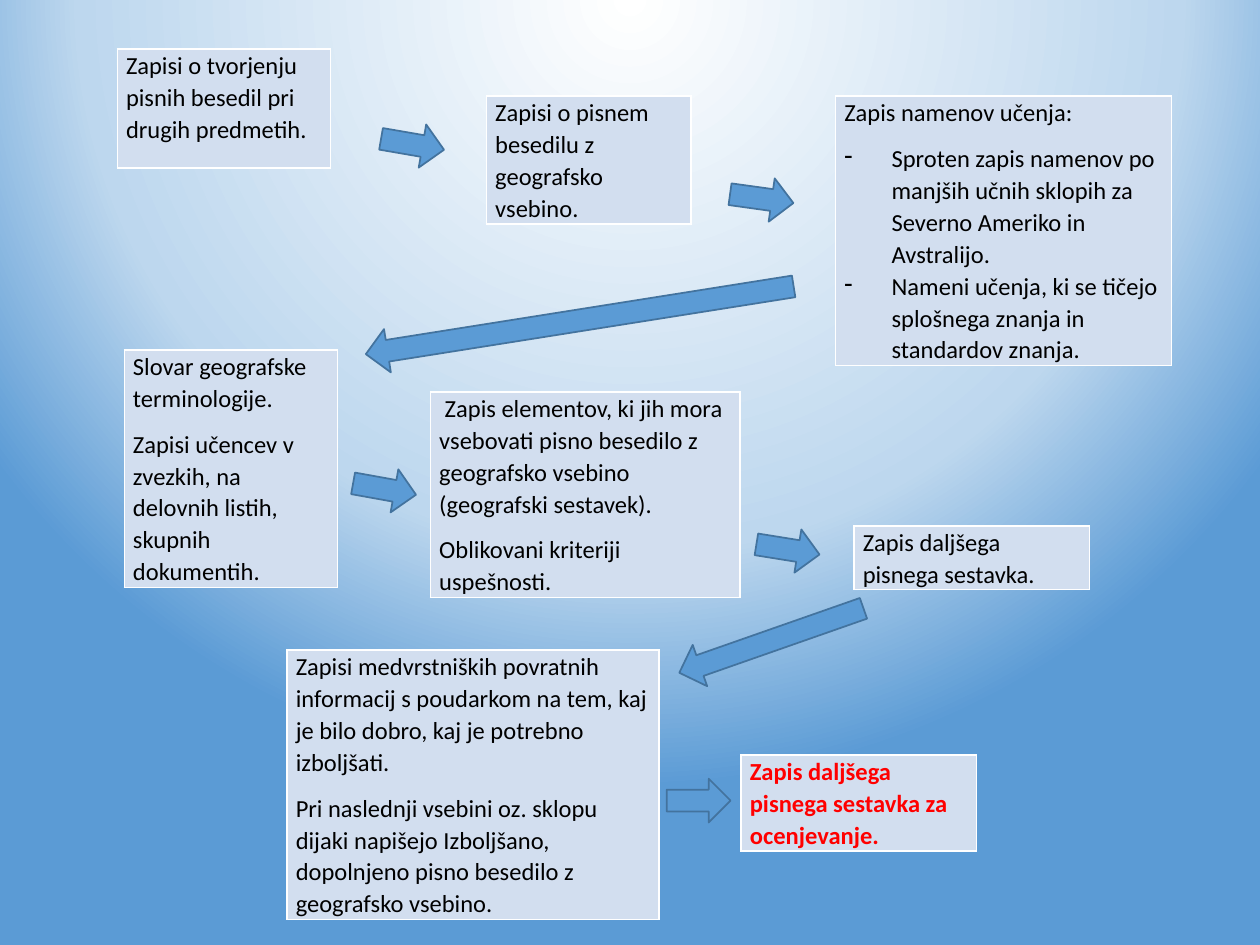
import pptx
import pptx.dml.color
import pptx.enum.shapes
import pptx.oxml
import pptx.oxml.ns
import pptx.util
from lxml import etree

Pt = pptx.util.Pt
RGBColor = pptx.dml.color.RGBColor
qn = pptx.oxml.ns.qn

WHITE = RGBColor(0xFF, 0xFF, 0xFF)
BLACK = RGBColor(0x00, 0x00, 0x00)
RED = RGBColor(0xFF, 0x00, 0x00)
PALE_BLUE = RGBColor(0xD2, 0xDE, 0xEF)
SKY_BLUE = RGBColor(0xBD, 0xD7, 0xEE)
BLUE = RGBColor(0x5B, 0x9B, 0xD5)
DARK_BLUE = RGBColor(0x43, 0x73, 0x9E)

BULLET = "- "
BULLET_INDENT = Pt(27)
ARROW_WIDTH, ARROW_HEIGHT = 36.5, 25

NOTES = [
    ((67, 28, 122, 68), ["Zapisi o tvorjenju pisnih besedil pri drugih predmetih."]),
    ((278, 55, 117, 72), ["Zapisi o pisnem besedilu z geografsko vsebino."]),
    ((477.5, 55, 192, 152), [
        "Zapis namenov učenja:",
        BULLET + "Sproten zapis namenov po manjših učnih sklopih za Severno Ameriko in Avstralijo.",
        BULLET + "Nameni učenja, ki se tičejo splošnega znanja in standardov znanja.",
    ]),
    ((71, 200, 122, 134), [
        "Slovar geografske terminologije.",
        "Zapisi učencev v zvezkih, na delovnih listih, skupnih dokumentih.",
    ]),
    ((246, 224, 177, 116), [
        " Zapis elementov, ki jih mora vsebovati pisno besedilo z geografsko vsebino (geografski sestavek).",
        "Oblikovani kriteriji uspešnosti.",
    ]),
    ((488, 300.5, 134.5, 36), ["Zapis daljšega pisnega sestavka."]),
    ((164, 371.5, 212.5, 152), [
        "Zapisi medvrstniških povratnih informacij s poudarkom na tem, kaj je bilo dobro, kaj je potrebno izboljšati.",
        "Pri naslednji vsebini oz. sklopu dijaki napišejo Izboljšano, dopolnjeno pisno besedilo z geografsko vsebino.",
    ]),
]
FINAL_NOTE = ((423.5, 431.5, 134.5, 54), ["Zapis daljšega pisnega sestavka za ocenjevanje."])

ARROWS = [
    (217.5, 70, ARROW_WIDTH, 9.8),
    (417, 101, ARROW_WIDTH, 7.9),
    (201.5, 267, ARROW_WIDTH, 10.2),
    (432, 301.5, ARROW_WIDTH, 9.1),
    (381, 445, ARROW_WIDTH, 0),
    (207.5, 170.5, 247.5, 171),
    (385, 353.5, 111.5, 160.7),
]


def paint_background(slide):
    slide.background.fill.gradient()
    gradient = next(slide.element.iter(qn("a:gradFill")))
    for child in list(gradient):
        gradient.remove(child)
    stops = etree.SubElement(gradient, qn("a:gsLst"))
    for position, color in ((0, WHITE), (70, SKY_BLUE), (100, BLUE)):
        stop = etree.SubElement(stops, qn("a:gs"), pos=str(position * 1000))
        etree.SubElement(stop, qn("a:srgbClr"), val=str(color))
    circle = etree.SubElement(gradient, qn("a:path"), {"path": "circle"})
    etree.SubElement(circle, qn("a:fillToRect"), l="50000", t="-80000", r="50000", b="180000")


def outline_cell(cell_properties):
    for index, side in enumerate(("lnL", "lnR", "lnT", "lnB")):
        border = etree.Element(qn(f"a:{side}"), w=str(Pt(1)))
        border_fill = etree.SubElement(border, qn("a:solidFill"))
        etree.SubElement(border_fill, qn("a:srgbClr"), val=str(WHITE))
        cell_properties.insert(index, border)


def write_paragraph(paragraph, element, text, color, bold):
    bulleted = text.startswith(BULLET)
    paragraph.text = text.removeprefix(BULLET)
    paragraph.line_spacing = 1.07
    paragraph.space_after = Pt(0 if bulleted else 8)
    font = paragraph.runs[0].font
    font.name, font.size, font.bold = "Calibri", Pt(14), bold
    font.color.rgb = color
    if bulleted:
        properties = element.find(qn("a:pPr"))
        properties.set("marL", str(BULLET_INDENT))
        properties.set("indent", str(-BULLET_INDENT))
        etree.SubElement(properties, qn("a:buChar"), char=BULLET.strip())


def add_note(slide, box, texts, color=BLACK, bold=False):
    frame = slide.shapes.add_table(1, 1, *map(Pt, box))
    table = frame.table
    table.first_row = table.horz_banding = False
    cell = table.cell(0, 0)
    cell.margin_left = cell.margin_right = Pt(5)
    cell.margin_top = cell.margin_bottom = 0
    cell.fill.solid()
    cell.fill.fore_color.rgb = PALE_BLUE
    outline_cell(next(frame.element.iter(qn("a:tcPr"))))
    cell.text_frame.text = "\n".join(texts)
    elements = frame.element.iter(qn("a:p"))
    for paragraph, element, text in zip(cell.text_frame.paragraphs, elements, texts):
        write_paragraph(paragraph, element, text, color, bold)


def add_arrow(slide, left, top, width, rotation):
    arrow = slide.shapes.add_shape(
        pptx.enum.shapes.MSO_SHAPE.RIGHT_ARROW, Pt(left), Pt(top), Pt(width), Pt(ARROW_HEIGHT)
    )
    arrow.rotation = rotation
    arrow.shadow.inherit = False
    arrow.fill.solid()
    arrow.fill.fore_color.rgb = BLUE
    arrow.line.color.rgb = DARK_BLUE
    arrow.line.width = Pt(1)


def main():
    presentation = pptx.Presentation()
    presentation.slide_width, presentation.slide_height = Pt(720), Pt(540)
    slide = presentation.slides.add_slide(presentation.slide_layouts[6])
    paint_background(slide)
    for box, texts in NOTES:
        add_note(slide, box, texts)
    add_note(slide, *FINAL_NOTE, color=RED, bold=True)
    for arrow in ARROWS:
        add_arrow(slide, *arrow)
    presentation.save("out.pptx")


if __name__ == "__main__":
    main()
